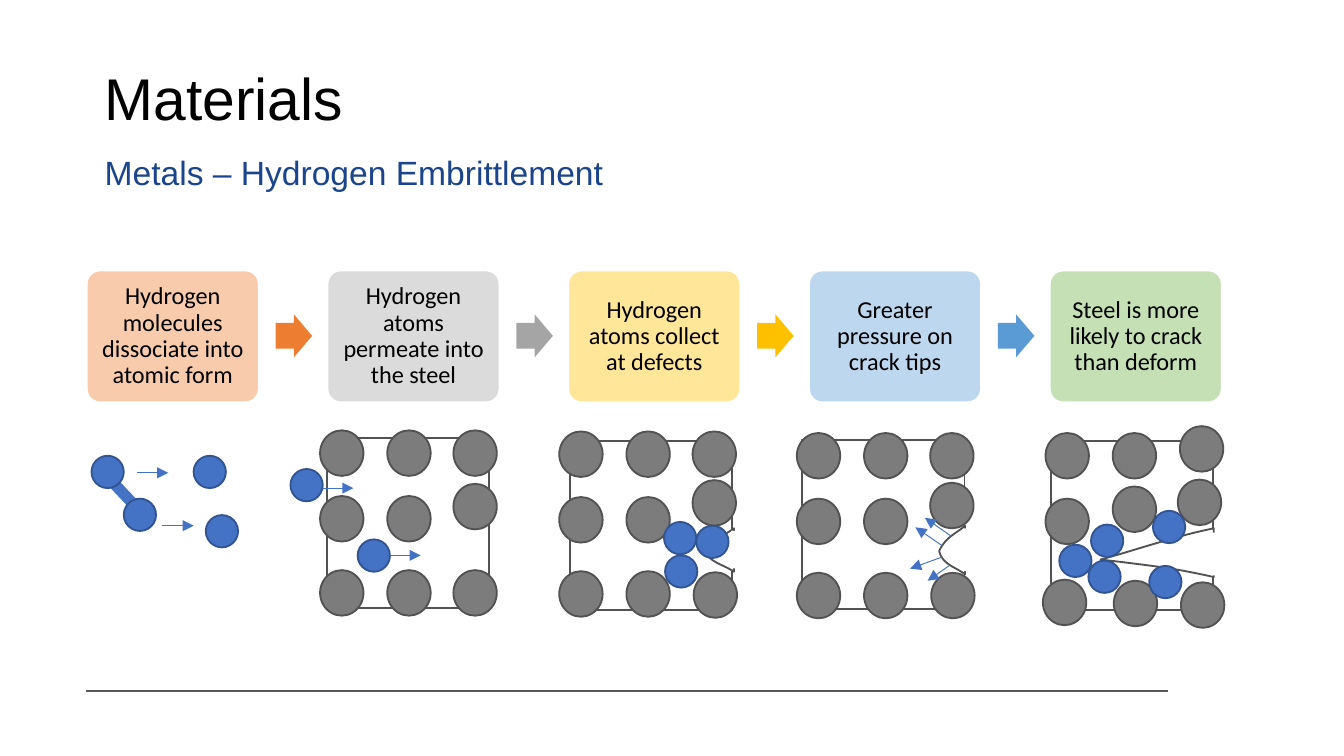
"""Build a slide on hydrogen embrittlement of metals."""
import pptx
import pptx.dml.color
import pptx.enum.shapes
import pptx.enum.text
import pptx.oxml
import pptx.oxml.ns
import pptx.util

Cm = pptx.util.Cm
Pt = pptx.util.Pt
SHAPE = pptx.enum.shapes.MSO_SHAPE
ALIGN = pptx.enum.text.PP_ALIGN
ANCHOR = pptx.enum.text.MSO_ANCHOR

COLOURS = {
    "black": "000000", "white": "FFFFFF", "subtitle": "1A448C", "rule": "57585A",
    "hydrogen": "4472C4", "hydrogen_edge": "325491",
    "metal": "7C7C7C", "metal_edge": "525252",
    "peach": "F8CBAD", "silver": "DBDBDB", "cream": "FFE699", "sky": "BDD7EE", "mint": "C5E0B4",
    "orange": "ED7D31", "grey": "A5A5A5", "gold": "FFC000", "blue": "5B9BD5",
}
STEPS = [
    ("Hydrogen molecules dissociate into atomic form", "peach", "orange"),
    ("Hydrogen atoms permeate into the steel", "silver", "grey"),
    ("Hydrogen atoms collect at defects", "cream", "gold"),
    ("Greater pressure on crack tips", "sky", "blue"),
    ("Steel is more likely to crack than deform", "mint", None),
]
STEP_PITCH = 4.55
METAL_COLUMNS = (0, 1.27, 2.52)
METAL_ROWS = (0, 1.24, 2.64)
PANELS = [
    {
        "bond": (2.16, 9.14, 2.64, 9.65),
        "hydrogen": [(1.73, 8.61), (2.34, 9.42), (3.66, 8.61), (3.89, 9.73)],
        "arrows": [(2.59, 8.93, 3.18, 8.93), (3.07, 9.93, 3.66, 9.93)],
    },
    {
        "frame": (6.18, 8.28), "metal": (6.05, 8.13), "shifts": {(1, 2): (0, -0.23)},
        "hydrogen": [(6.76, 10.19), (5.49, 8.86)],
        "arrows": [(7.37, 10.49, 7.95, 10.49), (6.1, 9.22, 6.68, 9.22)],
    },
    {
        "frame": (10.77, 8.33), "metal": (10.57, 8.15),
        "shifts": {(1, 2): (0, -0.32), (2, 2): (0.02, 0.02)},
        "crack": [(13.87, 10.8), (13.69, 10.67), (13.39, 10.62), (13.34, 10.41),
                  (13.46, 10.16), (13.69, 10.13), (13.87, 9.98)],
        "opening": (13.82, 10.03, 0.13, 0.71),
        "hydrogen": [(12.55, 9.86), (13.16, 9.93), (12.57, 10.49)],
    },
    {
        "frame": (15.16, 8.31), "metal": (15.06, 8.18),
        "shifts": {(1, 2): (0, -0.3), (2, 2): (0.02, 0)},
        "crack": [(18.24, 10.85), (18.08, 10.72), (17.81, 10.67), (17.75, 10.41),
                  (17.88, 10.13), (18.08, 10.08), (18.24, 9.93)],
        "opening": (18.21, 9.98, 0.1, 0.81),
        "arrows": [(17.98, 10.13, 17.48, 9.78), (17.81, 10.31, 17.3, 9.96),
                   (17.81, 10.52, 17.2, 10.74), (17.93, 10.69, 17.53, 10.97)],
    },
    {
        "frame": (19.86, 8.33), "metal": (19.76, 8.18),
        "shifts": {(0, 2): (0.02, -0.13), (1, 1): (0, -0.23), (1, 2): (-0.02, -0.36),
                   (2, 0): (-0.05, 0.13), (2, 1): (0.02, 0.15), (2, 2): (0.04, 0.18)},
        "crack": [(22.94, 10.9), (22.2, 10.74), (22.05, 10.72), (20.8, 10.57),
                  (21.41, 10.41), (22.2, 10.13), (22.94, 9.98)],
        "opening": (22.89, 10.06, 0.1, 0.81),
        "hydrogen": [(20.57, 10.59), (21.72, 10.69), (20.62, 9.91), (21.79, 9.65), (20.02, 10.29)],
    },
]


def colour(name):
    """Return the named colour."""
    return pptx.dml.color.RGBColor.from_string(COLOURS[name])


def set_values(target, values):
    """Set each attribute of the target from a dict."""
    for name, value in values.items():
        setattr(target, name, value)


def write_text(shape, text, size, font, ink, align, frame_values):
    """Write one formatted paragraph into a shape."""
    frame = shape.text_frame
    set_values(frame, {"word_wrap": True, "auto_size": pptx.enum.text.MSO_AUTO_SIZE.NONE, **frame_values})
    paragraph = frame.paragraphs[0]
    paragraph.text = text
    set_values(paragraph, {"alignment": align, "line_spacing": 0.9, "space_before": Pt(0)})
    set_values(paragraph.font, {"size": Pt(size), "name": font})
    paragraph.font.color.rgb = colour(ink)


def paint(shape, fill, edge):
    """Give a shape its fill and outline, or neither."""
    shape.shadow.inherit = False
    if fill:
        shape.fill.solid()
        shape.fill.fore_color.rgb = colour(fill)
    else:
        shape.fill.background()
    if edge:
        shape.line.color.rgb = colour(edge)
        shape.line.width = Pt(1)
    else:
        shape.line.fill.background()


def add_preset(slide, kind, box, fill=None, edge=None, adjustments=()):
    """Add a preset shape in a box of left, top, width and height."""
    shape = slide.shapes.add_shape(kind, *map(Cm, box))
    for index, value in enumerate(adjustments):
        shape.adjustments[index] = value
    paint(shape, fill, edge)
    return shape


def add_line(slide, ends, ink, width, arrow=False):
    """Add a straight line, with an arrowhead if wanted."""
    connector = slide.shapes.add_connector(pptx.enum.shapes.MSO_CONNECTOR.STRAIGHT, *map(Cm, ends))
    connector.line.color.rgb = colour(ink)
    connector.line.width = Pt(width)
    if arrow:
        head = pptx.oxml.parse_xml(f'<a:tailEnd {pptx.oxml.ns.nsdecls("a")} type="triangle"/>')
        connector.line._get_or_add_ln().append(head)
    properties = connector._element.spPr
    properties.append(pptx.oxml.parse_xml(f'<a:effectLst {pptx.oxml.ns.nsdecls("a")}/>'))


def curve_points(controls, count=12):
    """Return points along a cubic curve, without its start."""
    points = []
    for index in range(1, count + 1):
        t = index / count
        weights = ((1 - t) ** 3, 3 * t * (1 - t) ** 2, 3 * t * t * (1 - t), t ** 3)
        points.append(tuple(Cm(sum(w * point[axis] for w, point in zip(weights, controls)))
                            for axis in (0, 1)))
    return points


def add_crack(slide, controls):
    """Add a crack made of two curves that meet at its tip."""
    builder = slide.shapes.build_freeform(*map(Cm, controls[0]), scale=1.0)
    builder.add_line_segments(curve_points(controls[:4]) + curve_points(controls[3:]), close=True)
    paint(builder.convert_to_shape(), "white", "metal_edge")


def add_lattice(slide, origin, shifts):
    """Add a grid of metal atoms, some of them displaced."""
    for row, down in enumerate(METAL_ROWS):
        for column, across in enumerate(METAL_COLUMNS):
            dx, dy = shifts.get((row, column), (0, 0))
            box = (origin[0] + across + dx, origin[1] + down + dy, 0.82, 0.86)
            add_preset(slide, SHAPE.OVAL, box, "metal", "metal_edge")


def add_step(slide, index, text, fill, arrow_fill):
    """Add a step of the process and the arrow after it."""
    left = 1.64 + index * STEP_PITCH
    card = add_preset(slide, SHAPE.ROUNDED_RECTANGLE, (left, 5.11, 3.25, 2.49), fill, "white", [0.1])
    insets = {f"margin_{side}": Cm(0.13) for side in ("left", "top", "right", "bottom")}
    write_text(card, text, 13, "Calibri", "black", ALIGN.CENTER,
               {"vertical_anchor": ANCHOR.MIDDLE, **insets})
    if arrow_fill:
        add_preset(slide, SHAPE.RIGHT_ARROW, (left + 3.57, 5.94, 0.69, 0.81), arrow_fill,
                   adjustments=[0.6, 0.5])


def add_panel(slide, panel):
    """Add the drawing of atoms below a step."""
    if "bond" in panel:
        add_line(slide, panel["bond"], "hydrogen", 6)
    if "frame" in panel:
        add_preset(slide, SHAPE.RECTANGLE, (*panel["frame"], 3.07, 3.2), edge="metal_edge")
        add_lattice(slide, panel["metal"], panel["shifts"])
    if "crack" in panel:
        add_crack(slide, panel["crack"])
        add_preset(slide, SHAPE.RECTANGLE, panel["opening"], "white")
    for position in panel.get("hydrogen", []):
        add_preset(slide, SHAPE.OVAL, (*position, 0.61, 0.61), "hydrogen", "hydrogen_edge")
    for ends in panel.get("arrows", []):
        add_line(slide, ends, "hydrogen", 0.5, arrow=True)


def main():
    """Build and save the presentation."""
    presentation = pptx.Presentation()
    set_values(presentation, {"slide_width": Cm(25.4), "slide_height": Cm(14.28)})
    slide = presentation.slides.add_slide(presentation.slide_layouts[5])
    add_line(slide, (1.63, 13.05, 22.07, 13.05), "rule", 0.75)
    title = slide.shapes.title
    set_values(title, {"left": Cm(1.73), "top": Cm(1.24), "width": Cm(17.3), "height": Cm(1.37)})
    write_text(title, "Materials", 31.5, "Arial", "black", ALIGN.LEFT, {"vertical_anchor": ANCHOR.MIDDLE})
    subtitle = slide.shapes.add_textbox(Cm(1.73), Cm(2.84), Cm(15.75), Cm(1.4))
    write_text(subtitle, "Metals – Hydrogen Embrittlement", 18, "Arial", "subtitle", ALIGN.LEFT,
               {"vertical_anchor": ANCHOR.TOP})
    for index, step in enumerate(STEPS):
        add_step(slide, index, *step)
    for panel in PANELS:
        add_panel(slide, panel)
    presentation.save("out.pptx")


if __name__ == "__main__":
    main()
